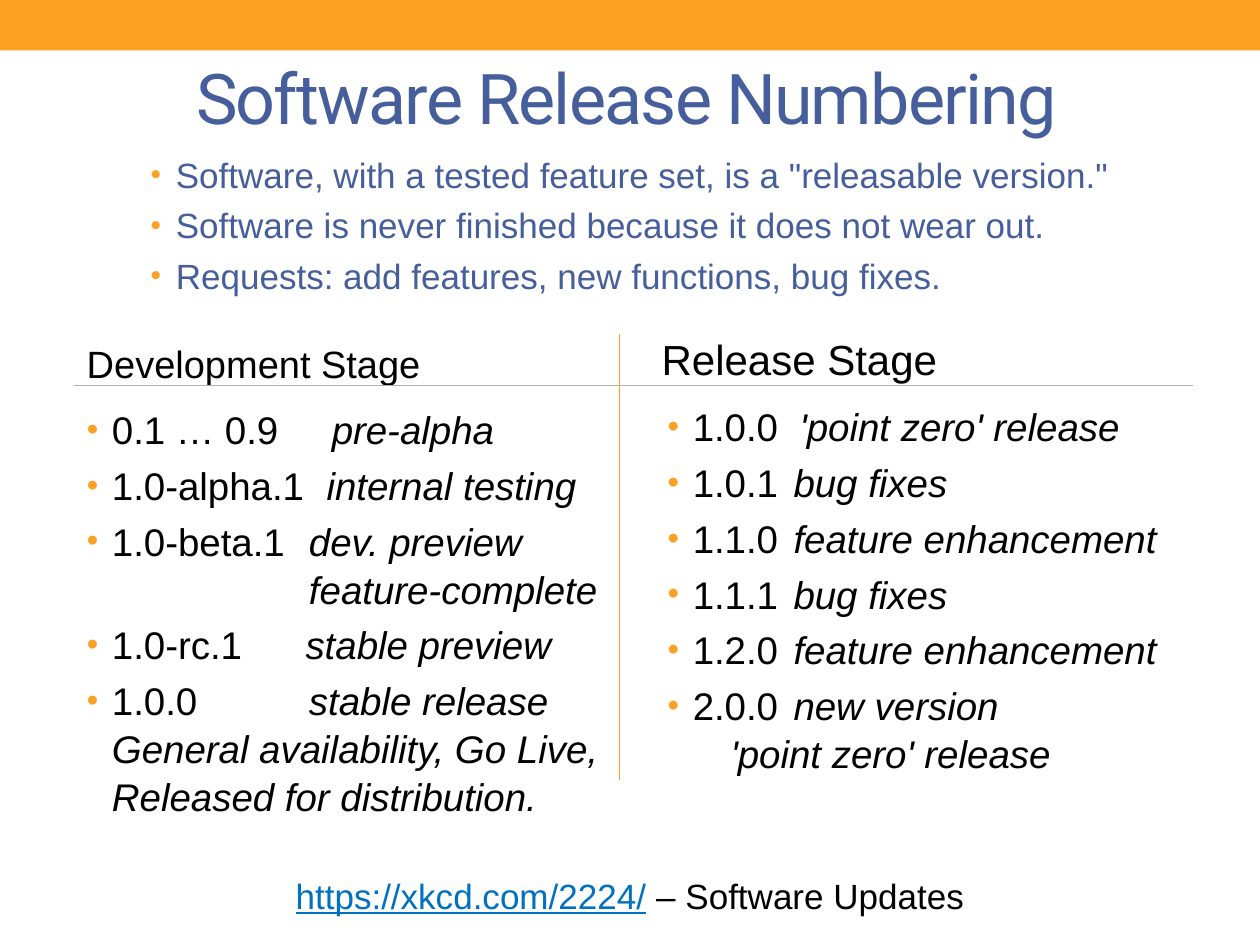
from lxml import etree
from pptx import Presentation
from pptx.dml.color import RGBColor
from pptx.enum import shapes, text
from pptx.oxml import ns
from pptx.util import Pt

ORANGE = RGBColor(0xFD, 0xA0, 0x23)
BLUE = RGBColor(0x46, 0x5E, 0x9C)
LINK = RGBColor(0x00, 0x70, 0xC0)
BLACK = RGBColor(0, 0, 0)
GREY = RGBColor(0xB0, 0xB0, 0xB0)

FACTS = [
    'Software, with a tested feature set, is a "releasable version."',
    "Software is never finished because it does not wear out.",
    "Requests: add features, new functions, bug fixes.",
]
STAGES = [
    ("0.1 … 0.9\t", "pre-alpha", 140),
    ("1.0-alpha.1\t", "internal testing", 137),
    ("1.0-beta.1\t", "dev. preview\v\tfeature-complete", 127),
    ("1.0-rc.1\t", "stable preview", 125),
    ("1.0.0\t", "stable release\vGeneral availability, Go Live, Released for distribution.", 127),
]
ISSUES = [
    ("1.0.0  ", "'point zero' release"),
    ("1.0.1\t", "bug fixes"),
    ("1.1.0\t", "feature enhancement"),
    ("1.1.1\t", "bug fixes"),
    ("1.2.0\t", "feature enhancement"),
    ("2.0.0\t", "new version\v\t'point zero' release"),
]


def add_run(para, words, size, color, italic=False):
    for i, part in enumerate(words.split("\v")):
        if i:
            para.add_line_break()
        run = para.add_run()
        run.text = part
        font = run.font
        font.name = "Arial"
        font.size = Pt(size)
        font.italic = italic
        font.color.rgb = color
    return run


def add_box(slide, left, top, width, height):
    frame = slide.shapes.add_textbox(Pt(left), Pt(top), Pt(width), Pt(height)).text_frame
    frame.word_wrap = True
    return frame


def add_node(parent, tag, **attrs):
    return etree.SubElement(parent, ns.qn(tag), **attrs)


def set_bullet(para, stop=None):
    props = para._p.get_or_add_pPr()
    props.set("marL", str(Pt(14.4)))
    props.set("indent", str(Pt(-14.4)))
    tint = add_node(props, "a:buClr")
    add_node(tint, "a:srgbClr", val=str(ORANGE))
    add_node(props, "a:buSzPct", val="85000")
    add_node(props, "a:buFont", typeface="Arial")
    add_node(props, "a:buChar", char="•")
    if stop:
        tabs = add_node(props, "a:tabLst")
        add_node(tabs, "a:tab", pos=str(Pt(stop)), algn="l")


def add_list(frame, rows, size, color):
    for i, (lead, note, stop) in enumerate(rows):
        para = frame.add_paragraph() if i else frame.paragraphs[0]
        set_bullet(para, stop)
        para.line_spacing = 1.04
        if i:
            para.space_before = Pt(size * 0.2)
        add_run(para, lead, size, color)
        if note:
            add_run(para, note, size, color, True)


def add_head(slide, words, size, left, top, width, height):
    frame = add_box(slide, left, top, width, height)
    add_run(frame.paragraphs[0], words, size, BLACK)


def add_rule(slide, x1, y1, x2, y2, color, weight):
    rule = slide.shapes.add_connector(
        shapes.MSO_CONNECTOR.STRAIGHT, Pt(x1), Pt(y1), Pt(x2), Pt(y2))
    rule.line.color.rgb = color
    rule.line.width = Pt(weight)
    add_node(rule._element.spPr, "a:effectLst")


def add_band(slide):
    band = slide.shapes.add_shape(shapes.MSO_SHAPE.RECTANGLE, 0, 0, Pt(720), Pt(28.8))
    band.shadow.inherit = False
    band.fill.solid()
    band.fill.fore_color.rgb = ORANGE
    band.line.fill.background()


def set_title(slide):
    title = slide.shapes.title
    title.left, title.top, title.width, title.height = Pt(34), Pt(26), Pt(648), Pt(58)
    frame = title.text_frame
    frame.vertical_anchor = text.MSO_ANCHOR.MIDDLE
    para = frame.paragraphs[0]
    para.alignment = text.PP_ALIGN.CENTER
    run = add_run(para, "Software Release Numbering", 40, BLUE)
    run.font.name = "Roboto"
    run.font._element.set("spc", "-100")


def add_foot(slide):
    para = add_box(slide, 79, 496, 562, 32).paragraphs[0]
    para.alignment = text.PP_ALIGN.CENTER
    add_run(para, "https://xkcd.com/2224/", 20, LINK).font.underline = True
    add_run(para, " – Software Updates", 20, BLACK)


def main():
    deck = Presentation()
    deck.slide_width, deck.slide_height = Pt(720), Pt(540)
    slide = deck.slides.add_slide(deck.slide_layouts[5])
    add_band(slide)
    set_title(slide)
    add_list(add_box(slide, 79, 83, 562, 110), [(fact, "", None) for fact in FACTS], 20, BLUE)
    add_head(slide, "Development Stage", 21.7, 42.5, 191, 310, 28)
    add_head(slide, "Release Stage", 24, 371, 187, 307, 34)
    add_list(add_box(slide, 42.5, 227.5, 309, 219), STAGES, 22, BLACK)
    add_list(add_box(slide, 374.4, 226, 297, 271),
             [(lead, note, None) for lead, note in ISSUES], 22, BLACK)
    add_rule(slide, 42.5, 220.3, 682, 220.3, GREY, 0.75)
    add_rule(slide, 354.2, 191, 354.2, 445.7, ORANGE, 0.75)
    add_foot(slide)
    deck.save("out.pptx")


if __name__ == "__main__":
    main()
